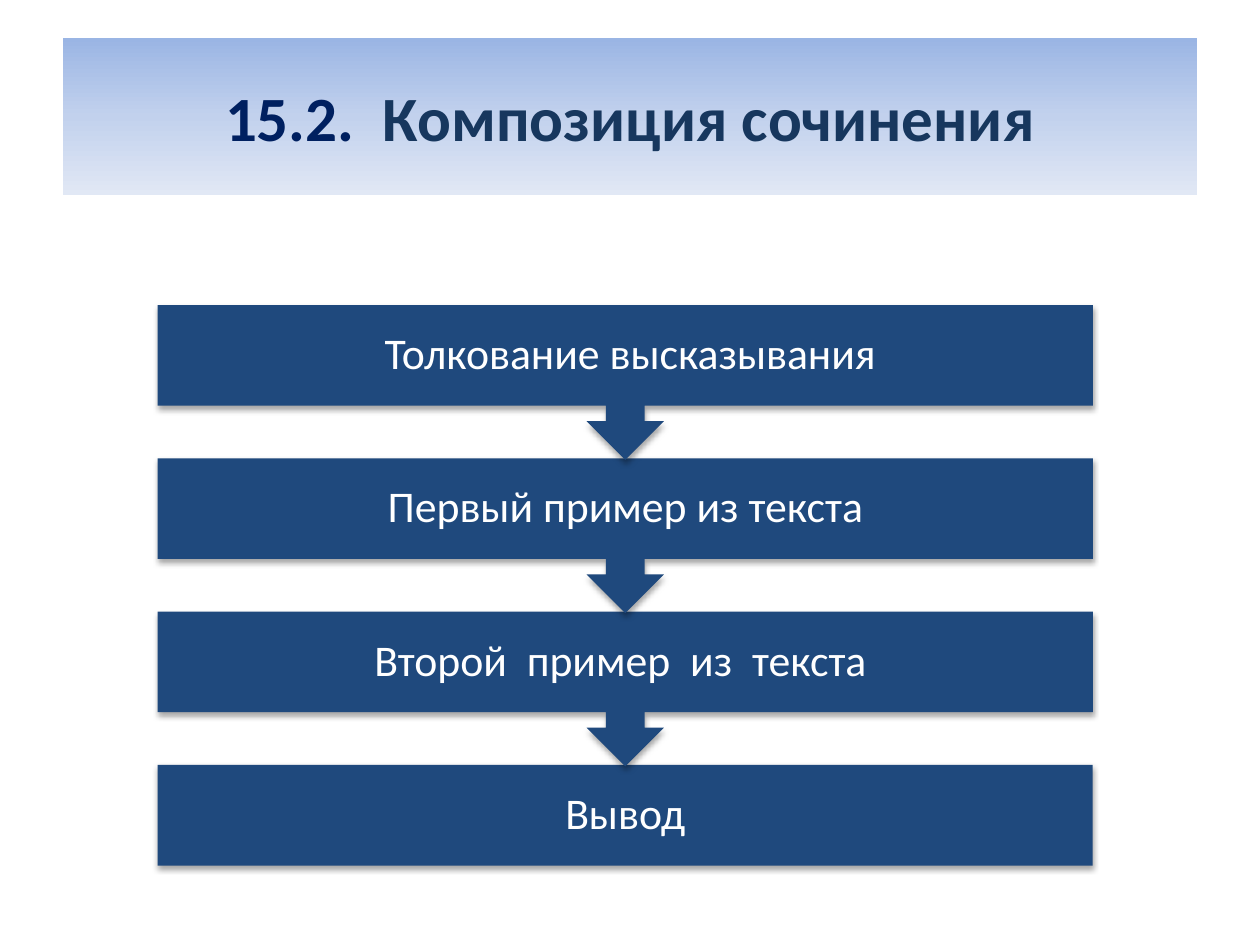
from copy import deepcopy
from dataclasses import dataclass

import pptx
from pptx import oxml
from pptx import util as u
from pptx.dml import color
from pptx.enum import shapes, text
from pptx.oxml import ns


@dataclass(frozen=True)
class Theme:
    font: str = "Calibri"
    title_size: int = 36
    step_size: int = 25
    number: str = "002060"
    title: str = "17375E"
    step_fill: str = "1F497D"
    step_text: str = "FFFFFF"
    banner: tuple = ("9AB5E4", "C2D1ED", "E1E8F5")


theme = Theme()
rgb = color.RGBColor.from_string

SHADOW = f"""<a:effectLst {ns.nsdecls("a")}>
  <a:outerShdw blurRad="40000" dist="23000" dir="5400000" rotWithShape="0">
    <a:srgbClr val="000000"><a:alpha val="35000"/></a:srgbClr>
  </a:outerShdw>
</a:effectLst>"""


def add_block(page, kind, left, top, width, height):
    """Add a borderless shape without shadow, its text centred."""
    box = page.shapes.add_shape(
        kind, u.Cm(left), u.Cm(top), u.Cm(width), u.Cm(height))
    box.shadow.inherit = False
    box.line.fill.background()
    box.text_frame.word_wrap = True
    box.text_frame.vertical_anchor = text.MSO_ANCHOR.MIDDLE
    box.text_frame.paragraphs[0].alignment = text.PP_ALIGN.CENTER
    return box


def style(span, size, ink, bold=False):
    span.font.name = theme.font
    span.font.size = u.Pt(size)
    span.font.bold = bold
    span.font.color.rgb = rgb(ink)


deck = pptx.Presentation()
deck.slide_width, deck.slide_height = u.Cm(25.4), u.Cm(19.05)
page = deck.slides.add_slide(deck.slide_layouts[6])

# Title banner, shaded from top to bottom
banner = add_block(page, shapes.MSO_SHAPE.RECTANGLE, 1.27, 0.76, 22.86, 3.18)
banner.fill.gradient()
banner.fill.gradient_angle = 270
stop_list = banner._element.spPr.find(".//" + ns.qn("a:gsLst"))
stop_list.insert(1, deepcopy(stop_list[0]))
for stop, shade, position in zip(
        banner.fill.gradient_stops, theme.banner, (0, 0.5, 1)):
    stop.color.rgb = rgb(shade)
    stop.position = position

para = banner.text_frame.paragraphs[0]
for words, ink in (("15.2.  ", theme.number),
                   ("Композиция сочинения", theme.title)):
    span = para.add_run()
    span.text = words
    style(span, theme.title_size, ink, bold=True)

# Steps, drawn from the last up so that each arrow tip lies over the next box
steps = [" Толкование высказывания", "Первый пример из текста",
         "Второй  пример  из  текста ", "Вывод"]
first_top, pitch = 6.15, 3.09
box_height, callout_height = 2.03, 3.12
last = len(steps) - 1

for index in reversed(range(len(steps))):
    if index == last:
        kind, height = shapes.MSO_SHAPE.RECTANGLE, box_height
    else:
        kind, height = shapes.MSO_SHAPE.DOWN_ARROW_CALLOUT, callout_height
    box = add_block(page, kind, 3.18, first_top + index * pitch, 18.85, height)
    box.fill.solid()
    box.fill.fore_color.rgb = rgb(theme.step_fill)
    properties = box._element.spPr
    properties.replace(properties.find(ns.qn("a:effectLst")),
                       oxml.parse_xml(SHADOW))

    frame = box.text_frame
    frame.margin_left = frame.margin_right = u.Cm(0.48)
    frame.margin_top = frame.margin_bottom = u.Cm(0.48)
    para = frame.paragraphs[0]
    para.text = steps[index]
    para.line_spacing = 0.9
    style(para.runs[0], theme.step_size, theme.step_text)

deck.save("out.pptx")
